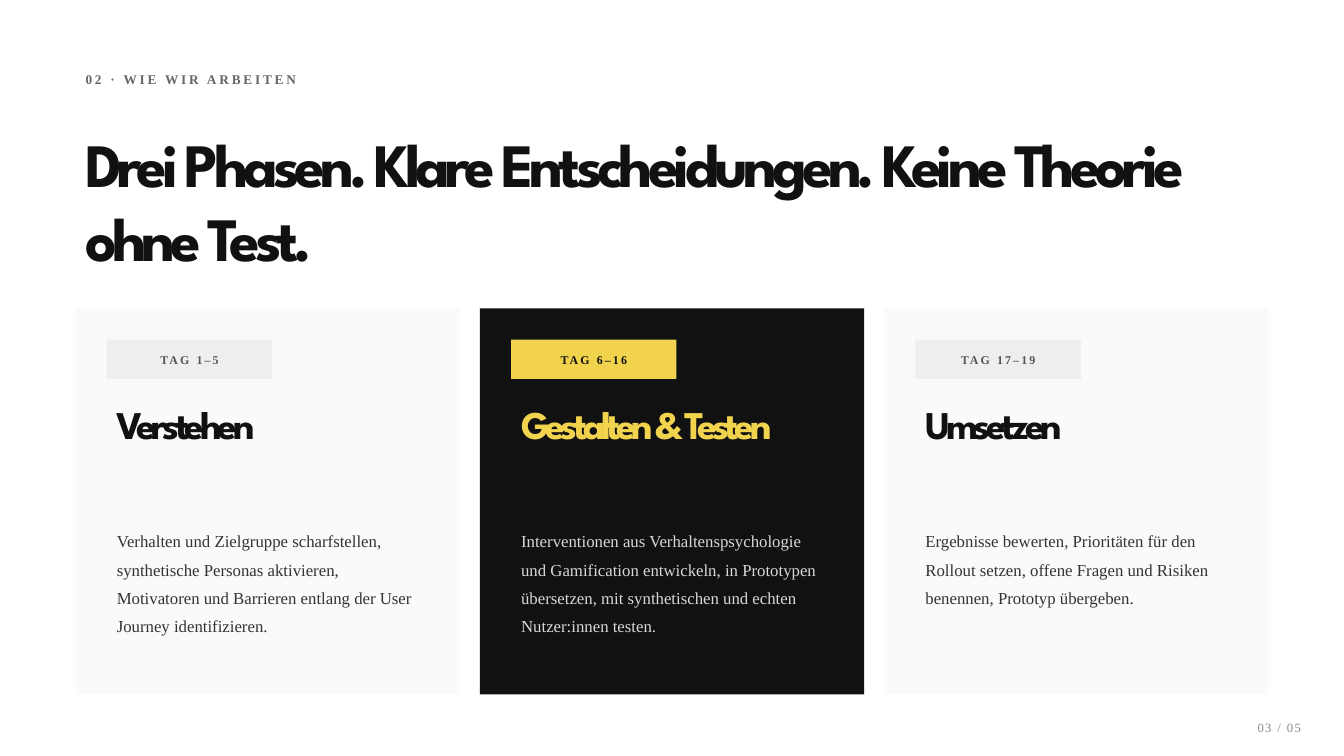
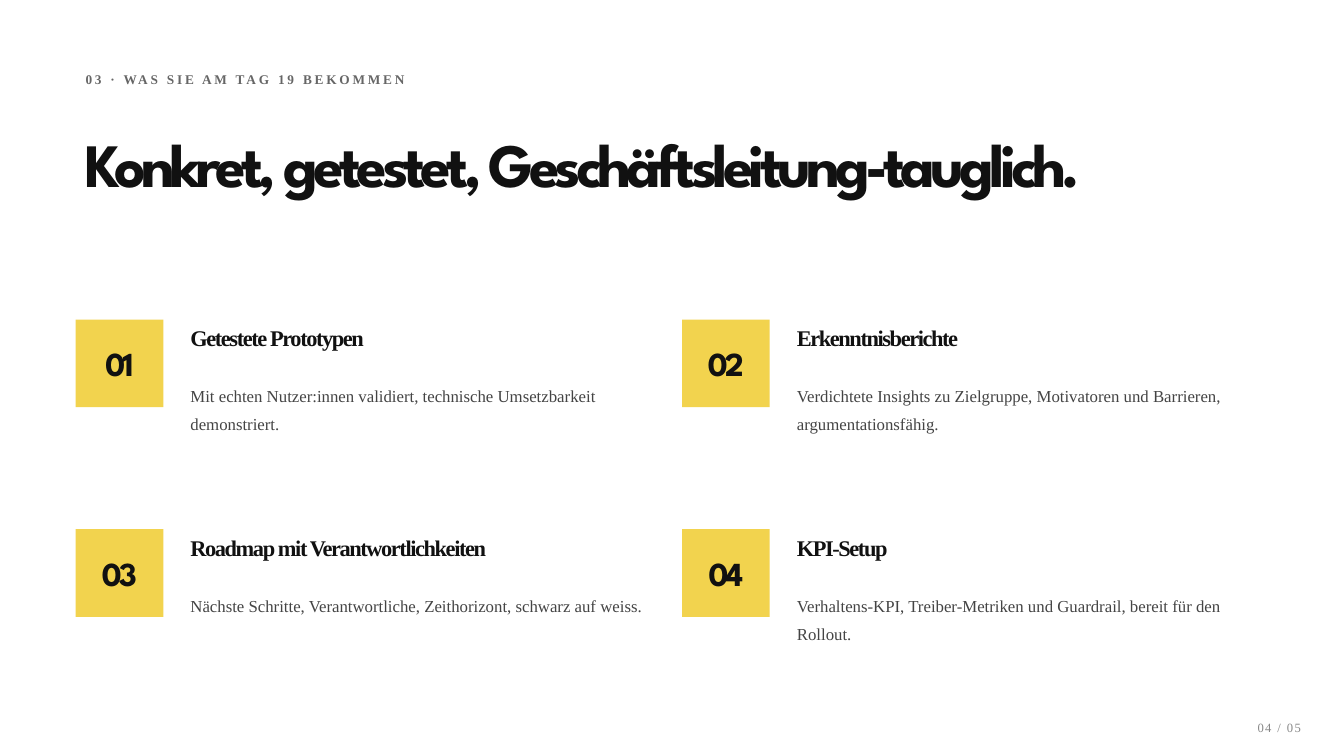
from dataclasses import dataclass

from pptx import Presentation
from pptx.dml.color import RGBColor
from pptx.enum.shapes import MSO_SHAPE
from pptx.enum.text import MSO_ANCHOR, PP_ALIGN
from pptx.util import Inches, Pt

RECTANGLE = MSO_SHAPE.RECTANGLE
TOP, MIDDLE = MSO_ANCHOR.TOP, MSO_ANCHOR.MIDDLE
LEFT, CENTER, RIGHT = PP_ALIGN.LEFT, PP_ALIGN.CENTER, PP_ALIGN.RIGHT

PAGE_COUNT = 5

PHASES = {
    "page": 3,
    "kicker": "02 · WIE WIR ARBEITEN",
    "title": "Drei Phasen. Klare Entscheidungen. Keine Theorie ohne Test.",
    "cards": [
        ("TAG 1–5", "Verstehen",
         "Verhalten und Zielgruppe scharfstellen, synthetische Personas aktivieren, "
         "Motivatoren und Barrieren entlang der User Journey identifizieren.", "light"),
        ("TAG 6–16", "Gestalten & Testen",
         "Interventionen aus Verhaltenspsychologie und Gamification entwickeln, "
         "in Prototypen übersetzen, mit synthetischen und echten Nutzer:innen testen.", "dark"),
        ("TAG 17–19", "Umsetzen",
         "Ergebnisse bewerten, Prioritäten für den Rollout setzen, offene Fragen "
         "und Risiken benennen, Prototyp übergeben.", "light"),
    ],
}

RESULTS = {
    "page": 4,
    "kicker": "03 · WAS SIE AM TAG 19 BEKOMMEN",
    "title": "Konkret, getestet, Geschäftsleitung-tauglich.",
    "items": [
        ("Getestete Prototypen",
         "Mit echten Nutzer:innen validiert, technische Umsetzbarkeit demonstriert."),
        ("Erkenntnisberichte",
         "Verdichtete Insights zu Zielgruppe, Motivatoren und Barrieren, argumentationsfähig."),
        ("Roadmap mit Verantwortlichkeiten",
         "Nächste Schritte, Verantwortliche, Zeithorizont, schwarz auf weiss."),
        ("KPI-Setup",
         "Verhaltens-KPI, Treiber-Metriken und Guardrail, bereit für den Rollout."),
    ],
}


@dataclass(frozen=True)
class Style:
    size: float
    color: str
    font: str = "Times New Roman"
    bold: bool = False
    tracking: float = 0
    align: PP_ALIGN = LEFT
    line_spacing: float = 1


@dataclass(frozen=True)
class Theme:
    ink = "111111"
    yellow = "F2D34E"
    display = "League Spartan"
    kicker = Style(9.5, "666666", bold=True, tracking=2)
    title = Style(44, ink, display, True, -3.5)
    page = Style(9, "888888", tracking=1, align=RIGHT)
    tag = Style(8.5, ink, bold=True, tracking=1.5, align=CENTER)
    phase = Style(28, ink, display, True, -3)
    number = Style(24, ink, display, True, -2, CENTER)
    result = Style(16, ink, bold=True, tracking=-1)
    body = Style(12, "444444", line_spacing=1.4)
    cards = {
        "light": {"fill": "FAFAFA", "tag_fill": "EEEEEE", "tag": "555555",
                  "heading": ink, "body": "333333"},
        "dark": {"fill": ink, "tag_fill": yellow, "tag": ink,
                 "heading": yellow, "body": "D8D8D8"},
    }


THEME = Theme()
MARGIN, CONTENT_WIDTH, GAP = 0.75, 11.83, 0.2


def column_grid(count):
    """Return the column width and the left edge of each column."""
    width = (CONTENT_WIDTH - GAP * (count - 1)) / count
    return width, [MARGIN + i * (width + GAP) for i in range(count)]


def write(shape, text, style, color=None, anchor=TOP):
    frame = shape.text_frame
    frame.word_wrap = True
    frame.vertical_anchor = anchor
    paragraph = frame.paragraphs[0]
    paragraph.alignment = style.align
    paragraph.line_spacing = style.line_spacing
    run = paragraph.add_run()
    run.text = text
    formats = {"name": style.font, "size": Pt(style.size), "bold": style.bold}
    for name, value in formats.items():
        setattr(run.font, name, value)
    run.font.color.rgb = RGBColor.from_string(color or style.color)
    if style.tracking:
        run._r.get_or_add_rPr().set("spc", str(round(style.tracking * 100)))


def add_text(slide, box, text, style, color=None):
    write(slide.shapes.add_textbox(*map(Inches, box)), text, style, color)


def add_block(slide, box, fill):
    shape = slide.shapes.add_shape(RECTANGLE, *map(Inches, box))
    shape.shadow.inherit = False
    shape.fill.solid()
    shape.fill.fore_color.rgb = RGBColor.from_string(fill)
    shape.line.fill.background()
    return shape


def add_slide(presentation, content):
    """Add a slide with the shared kicker and title."""
    slide = presentation.slides.add_slide(presentation.slide_layouts[6])
    add_text(slide, (MARGIN, 0.66, CONTENT_WIDTH, 0.39), content["kicker"], THEME.kicker)
    add_text(slide, (MARGIN, 1.2, CONTENT_WIDTH, 1.31), content["title"], THEME.title)
    return slide


def add_page_number(slide, page):
    add_text(slide, (12.08, 7.09, 0.92, 0.31), f"{page:02} / {PAGE_COUNT:02}", THEME.page)


def build_phases(presentation):
    slide = add_slide(presentation, PHASES)
    top, padding = 3.06, 0.31
    width, lefts = column_grid(len(PHASES["cards"]))
    for left, (tag, heading, body, look) in zip(lefts, PHASES["cards"]):
        colors = THEME.cards[look]
        inner, inner_width = left + padding, width - 2 * padding
        add_block(slide, (left, top, width, 3.83), colors["fill"])
        label = add_block(slide, (inner, top + padding, 1.64, 0.39), colors["tag_fill"])
        write(label, tag, THEME.tag, colors["tag"], MIDDLE)
        add_text(slide, (inner, 3.92, inner_width, 1.09), heading, THEME.phase, colors["heading"])
        add_text(slide, (inner, 5.14, inner_width, 1.53), body, THEME.body, colors["body"])
    add_page_number(slide, PHASES["page"])


def build_results(presentation):
    slide = add_slide(presentation, RESULTS)
    first_top, row_step, square, indent = 3.17, 2.08, 0.87, 1.04
    columns = 2
    width, lefts = column_grid(columns)
    for index, (heading, body) in enumerate(RESULTS["items"]):
        row, column = divmod(index, columns)
        left, top = lefts[column], first_top + row * row_step
        text_left, text_width = left + indent, width - indent
        badge = add_block(slide, (left, top, square, square), THEME.yellow)
        badge.text_frame.margin_left = badge.text_frame.margin_right = 0
        write(badge, f"{index + 1:02}", THEME.number, anchor=MIDDLE)
        add_text(slide, (text_left, top, text_width, 0.49), heading, THEME.result)
        add_text(slide, (text_left, top + 0.53, text_width, 1.31), body, THEME.body)
    add_page_number(slide, RESULTS["page"])


def main():
    presentation = Presentation()
    presentation.slide_width = Inches(13.33)
    presentation.slide_height = Inches(7.5)
    build_phases(presentation)
    build_results(presentation)
    presentation.save("out.pptx")


if __name__ == "__main__":
    main()
